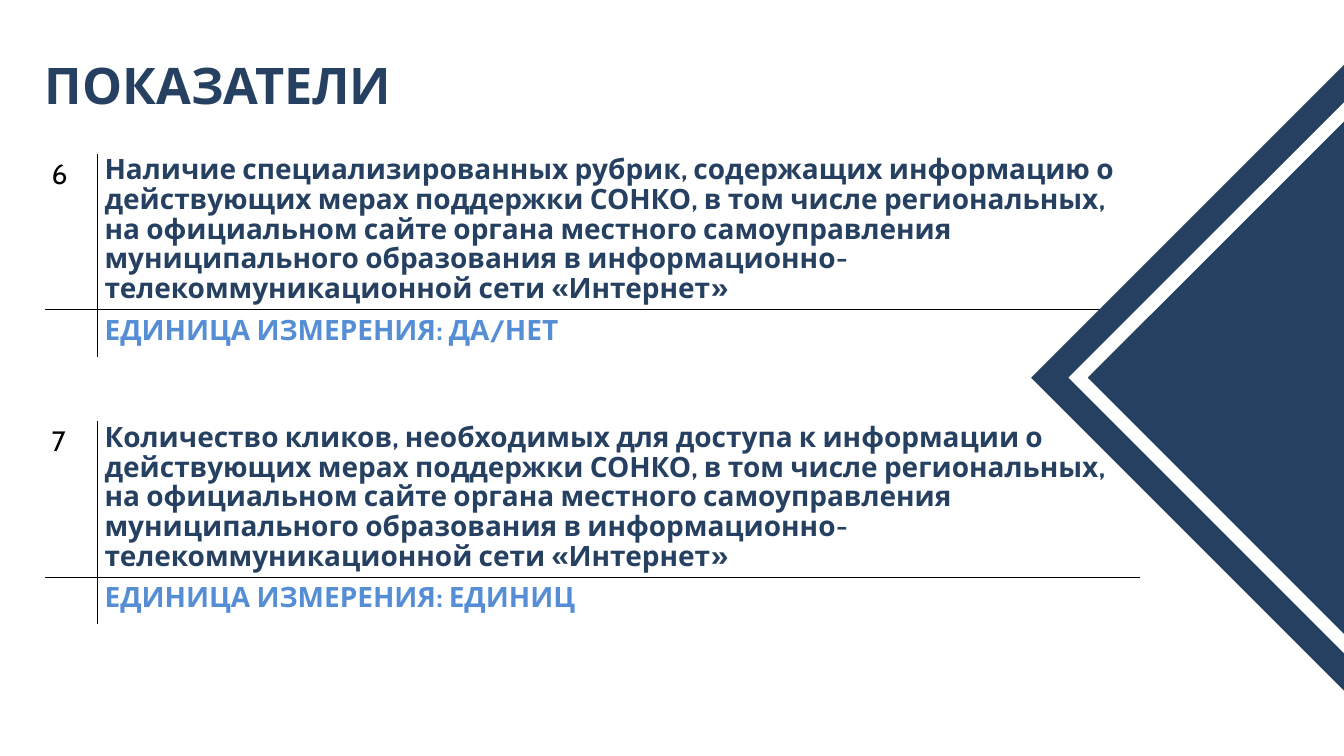
from lxml import etree
from pptx import Presentation
from pptx import util as u
from pptx.dml.color import RGBColor
from pptx.enum import shapes
from pptx.oxml import ns

HUES = {"navy": "254061", "blue": "558ED5", "black": "000000", "white": "FFFFFF"}
FONT = "Cabin"
TAIL = (
    "действующих мерах поддержки СОНКО, в том числе региональных, "
    "на официальном сайте органа местного самоуправления муниципального "
    "образования в информационно-телекоммуникационной сети «Интернет»"
)
ITEMS = [
    ("6", "Наличие специализированных рубрик, содержащих информацию о " + TAIL, "ДА/НЕТ"),
    ("7", "Количество кликов, необходимых для доступа к информации о " + TAIL, "ЕДИНИЦ"),
]


def style(para, size, hue, bold=True, space=None):
    if space:
        para.line_spacing = u.Pt(space)
    for run in para.runs:
        font = run.font
        font.name, font.size, font.bold = FONT, u.Pt(size), bold
        font.color.rgb = RGBColor.from_string(HUES[hue])


def rule(cell, sides):
    props = cell._tc.get_or_add_tcPr()
    for side in "LRTB":
        line = etree.SubElement(props, ns.qn("a:ln" + side), w="12700")
        if side in sides:
            fill = etree.SubElement(line, ns.qn("a:solidFill"))
            etree.SubElement(fill, ns.qn("a:srgbClr"), val=HUES["black"])
        else:
            etree.SubElement(line, ns.qn("a:noFill"))


def add_title(slide, left, top, width, height):
    box = slide.shapes.add_textbox(u.Cm(left), u.Cm(top), u.Cm(width), u.Cm(height))
    frame = box.text_frame
    frame.word_wrap = True
    frame.margin_left = frame.margin_right = frame.margin_top = frame.margin_bottom = 0
    frame.text = "ПОКАЗАТЕЛИ"
    style(frame.paragraphs[0], 54, "navy", space=68.2)


def add_item(slide, item, left, top, width, height):
    num, name, unit = item
    side, base = 2, 1.78
    frame = slide.shapes.add_table(2, 2, u.Cm(left), u.Cm(top), u.Cm(width), u.Cm(height))
    table = frame.table
    table.first_row = table.horz_banding = False
    for col, size in zip(table.columns, (side, width - side)):
        col.width = u.Cm(size)
    for row, size in zip(table.rows, (height - base, base)):
        row.height = u.Cm(size)
    for cell, sides in zip(table.iter_cells(), ("RB", "LB", "RT", "LT")):
        rule(cell, sides)
        cell.fill.background()
    parts = [
        (0, 0, num, "black", False, None),
        (0, 1, name, "navy", True, 31.8),
        (1, 1, "ЕДИНИЦА ИЗМЕРЕНИЯ: " + unit, "blue", True, None),
    ]
    for row, col, words, hue, bold, space in parts:
        cell = table.cell(row, col)
        cell.text = words
        style(cell.text_frame.paragraphs[0], 30, hue, bold, space)


def add_gem(slide, left, top, size):
    inset, band = 1, 0.51
    inner = size - 2 * inset
    kinds = shapes.MSO_SHAPE
    for kind, gap, hue in ((kinds.RECTANGLE, 0, "navy"), (kinds.FRAME, inset, "white")):
        edge = u.Cm(size - 2 * gap)
        shape = slide.shapes.add_shape(kind, u.Cm(left + gap), u.Cm(top + gap), edge, edge)
        shape.rotation = 45
        shape.shadow.inherit = False
        shape.fill.solid()
        shape.fill.fore_color.rgb = RGBColor.from_string(HUES[hue])
        shape.line.fill.background()
        if kind == kinds.FRAME:
            shape.adjustments[0] = band / inner


def main():
    deck = Presentation()
    deck.slide_width, deck.slide_height = u.Cm(50.8), u.Cm(28.58)
    slide = deck.slides.add_slide(deck.slide_layouts[6])
    left, width, height = 1.7, 41.38, 7.67
    add_item(slide, ITEMS[0], left, 5.82, width, height)
    add_gem(slide, 42.75, 5.16, 18.24)
    add_title(slide, left, 1.93, 19.5, 2.2)
    add_item(slide, ITEMS[1], left, 15.93, width, height)
    deck.save("out.pptx")


if __name__ == "__main__":
    main()
